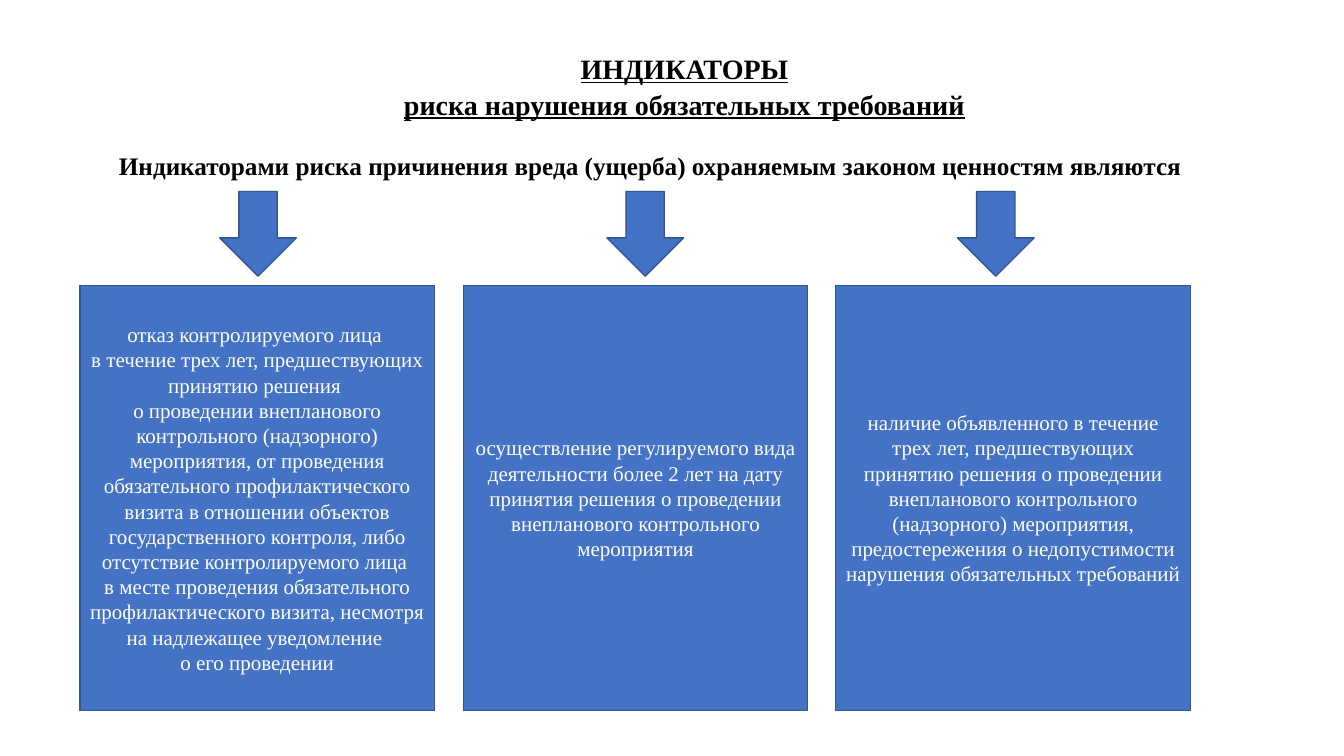
from copy import deepcopy

from pptx import Presentation
from pptx import util as u
from pptx.dml import color
from pptx.enum import shapes, text
from pptx.oxml import ns

FONT = "Times New Roman"
COLORS = {"fill": "4472C4", "line": "325491", "light": "FFFFFF", "dark": "000000"}
TITLE = "ИНДИКАТОРЫ\nриска нарушения обязательных требований"
LEAD = ("Индикаторами риска причинения вреда (ущерба) охраняемым законом "
        "ценностям являются")
INDICATORS = [
    (57, 253.4, 157,
     "отказ контролируемого лица \v"
     "в течение трех лет, предшествующих принятию решения \v"
     "о проведении внепланового контрольного (надзорного) мероприятия, "
     "от проведения обязательного профилактического визита в отношении "
     "объектов государственного контроля, либо отсутствие контролируемого лица \v"
     "в месте проведения обязательного профилактического визита, "
     "несмотря на надлежащее уведомление \v"
     "о его проведении"),
    (331.2, 245.5, 433.5,
     "осуществление регулируемого вида деятельности более 2 лет на дату принятия "
     "решения о проведении внепланового контрольного мероприятия"),
    (597, 253.4, 684,
     "наличие объявленного в течение трех лет, предшествующих принятию решения "
     "о проведении внепланового контрольного (надзорного) мероприятия, "
     "предостережения о недопустимости нарушения обязательных требований"),
]


def rgb(name):
    return color.RGBColor.from_string(COLORS[name])


def write(shape, words, size, tone, alignment, anchor, bold=False, underline=False):
    frame = shape.text_frame
    frame.text = words
    frame.word_wrap = True
    frame.auto_size = text.MSO_AUTO_SIZE.NONE
    frame.vertical_anchor = anchor
    for paragraph in frame.paragraphs:
        paragraph.alignment = alignment
        for run in paragraph.runs:
            run.font.name = FONT
            run.font.size = u.Pt(size)
            run.font.bold = bold
            run.font.underline = underline
            run.font.color.rgb = rgb(tone)
        properties = paragraph.runs[0].font._element
        for line_break in paragraph._p.findall(ns.qn("a:br")):
            line_break.insert(0, deepcopy(properties))


def add_title(slide):
    title = slide.shapes.title
    title.left, title.top = u.Pt(42.5), u.Pt(31.7)
    title.width, title.height = u.Pt(892.8), u.Pt(58)
    write(title, TITLE, 20, "dark", text.PP_ALIGN.CENTER, text.MSO_ANCHOR.TOP,
          bold=True, underline=True)
    for paragraph in title.text_frame.paragraphs:
        paragraph.line_spacing = 1.06
        paragraph.space_before = u.Pt(0)


def add_lead(slide):
    lead = slide.shapes.add_textbox(u.Pt(42.5), u.Pt(102.5), u.Pt(892.8), u.Pt(30))
    write(lead, LEAD, 18, "dark", text.PP_ALIGN.JUSTIFY, text.MSO_ANCHOR.TOP, bold=True)
    paragraph = lead.text_frame.paragraphs[0]
    paragraph.line_spacing = 1.06
    paragraph._p.get_or_add_pPr().set("indent", str(u.Pt(35.4)))


def add_block(slide, kind, left, top, width, height):
    shape = slide.shapes.add_shape(kind, u.Pt(left), u.Pt(top), u.Pt(width), u.Pt(height))
    shape.shadow.inherit = False
    shape.fill.solid()
    shape.fill.fore_color.rgb = rgb("fill")
    shape.line.color.rgb = rgb("line")
    shape.line.width = u.Pt(1)
    return shape


def add_indicator(slide, left, width, arrow_left, words):
    box = add_block(slide, shapes.MSO_SHAPE.RECTANGLE, left, 203.8, width, 303.8)
    write(box, words, 15, "light", text.PP_ALIGN.CENTER, text.MSO_ANCHOR.MIDDLE)
    add_block(slide, shapes.MSO_SHAPE.DOWN_ARROW, arrow_left, 136.8, 54.7, 60.5)


def main():
    presentation = Presentation()
    presentation.slide_width, presentation.slide_height = u.Pt(960), u.Pt(540)
    slide = presentation.slides.add_slide(presentation.slide_layouts[5])
    add_title(slide)
    add_lead(slide)
    for indicator in INDICATORS:
        add_indicator(slide, *indicator)
    presentation.save("out.pptx")


if __name__ == "__main__":
    main()
